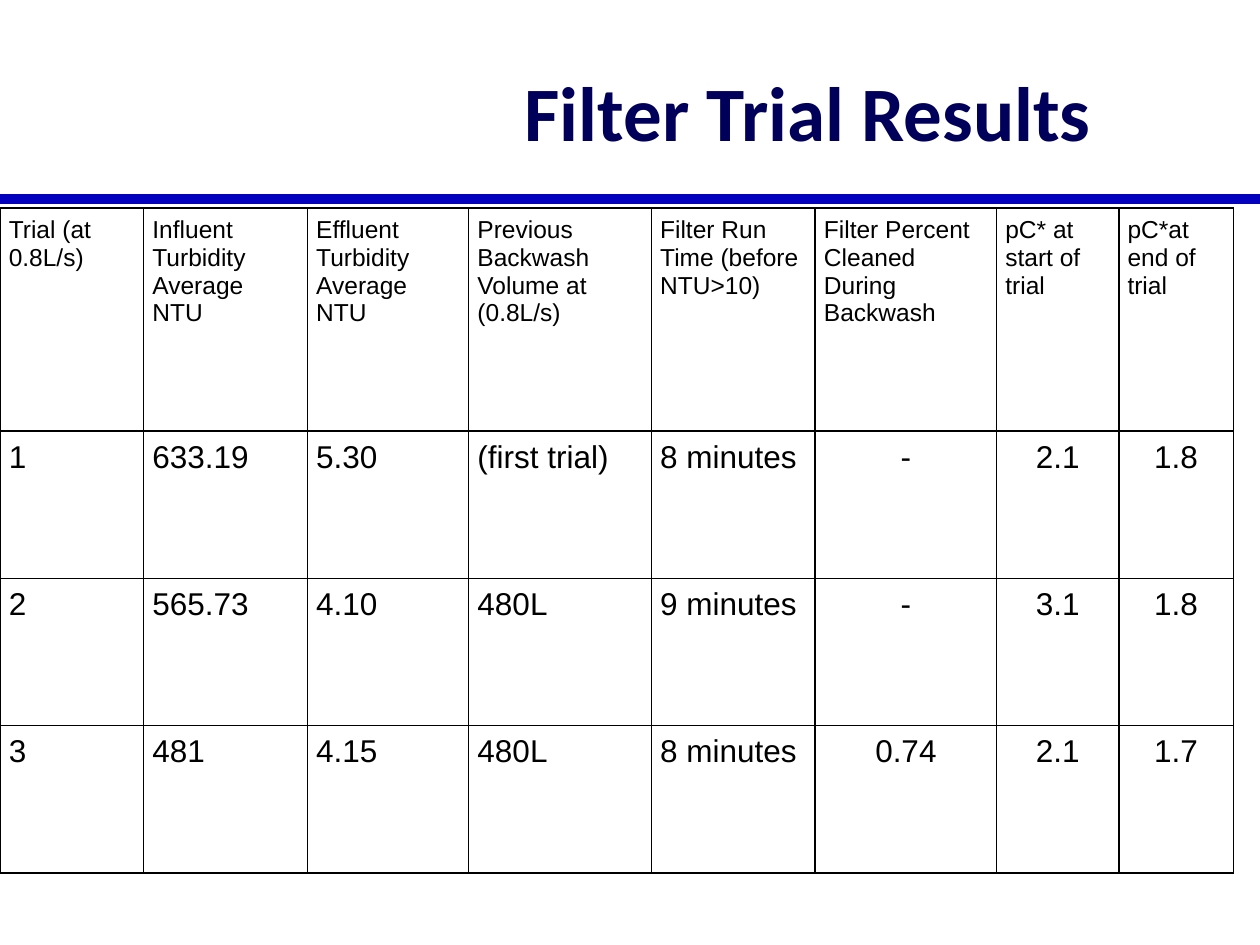
from lxml.etree import SubElement
from pptx import Presentation
from pptx.dml.color import RGBColor
from pptx.enum.shapes import MSO_CONNECTOR as Connector
from pptx.enum.text import MSO_ANCHOR as Anchor, PP_ALIGN as Align
from pptx.oxml import parse_xml
from pptx.oxml.ns import nsdecls, qn
from pptx.util import Inches, Pt

HEADERS = [
    "Trial (at 0.8L/s)",
    "Influent Turbidity Average NTU",
    "Effluent Turbidity Average NTU",
    "Previous Backwash Volume at (0.8L/s)",
    "Filter Run Time (before NTU>10)",
    "Filter Percent Cleaned During Backwash",
    "pC* at start of trial",
    "pC*at end of trial",
]
TRIALS = [
    ["1", "633.19", "5.30", "(first trial)", "8 minutes", "-", "2.1", "1.8"],
    ["2", "565.73", "4.10", "480L", "9 minutes", "-", "3.1", "1.8"],
    ["3", "481", "4.15", "480L", "8 minutes", "0.74", "2.1", "1.7"],
]
COLUMN_WIDTHS = [1.14, 1.3, 1.28, 1.45, 1.3, 1.44, 0.97, 0.91]
ROW_HEIGHTS = [1.77, 1.17, 1.17, 1.17]
FIRST_CENTERED_COLUMN = 5


def color(hex_string):
    return RGBColor.from_string(hex_string)


def write_text(frame, text, font="Arial", size=18, fill="000000", bold=False,
               align=Align.LEFT):
    paragraph = frame.paragraphs[0]
    paragraph.alignment = align
    run = paragraph.add_run()
    run.text = text
    run.font.name = font
    run.font.size = Pt(size)
    run.font.bold = bold
    run.font.color.rgb = color(fill)


def set_margins(target, margin):
    target.margin_left = target.margin_right = Inches(margin)
    target.margin_top = target.margin_bottom = Inches(margin)


def add_borders(cell, hex_string, points):
    """Draw all four cell borders; they must come before the fill."""
    properties = cell._tc.get_or_add_tcPr()
    for position, side in enumerate(("lnL", "lnR", "lnT", "lnB")):
        border = parse_xml(
            f'<a:{side} {nsdecls("a")} w="{Pt(points)}"><a:solidFill>'
            f'<a:srgbClr val="{hex_string}"/></a:solidFill></a:{side}>')
        properties.insert(position, border)


class SlideBuilder:
    """Holds the slide and its style."""

    title_font = "Calibri"
    title_color = "00005A"
    rule_color = "0300BE"
    border_color = "000000"

    def __init__(self, slide):
        self.slide = slide

    def rule(self, left, right, top, points):
        line = self.slide.shapes.add_connector(
            Connector.STRAIGHT, Inches(left), Inches(top), Inches(right), Inches(top))
        line.line.color.rgb = color(self.rule_color)
        line.line.width = Pt(points)
        SubElement(line._element.spPr, qn("a:effectLst"))

    def title(self, text, left, top, width, height):
        box = self.slide.shapes.add_textbox(
            Inches(left), Inches(top), Inches(width), Inches(height))
        frame = box.text_frame
        frame.word_wrap = True
        frame.vertical_anchor = Anchor.MIDDLE
        set_margins(frame, 0.1)
        write_text(frame, text, font=self.title_font, size=44,
                   fill=self.title_color, bold=True, align=Align.CENTER)

    def table(self, rows, left, top, widths, heights):
        table = self.slide.shapes.add_table(
            len(heights), len(widths), Inches(left), Inches(top),
            Inches(sum(widths)), Inches(sum(heights))).table
        table.first_row = table.horz_banding = False
        for column, width in zip(table.columns, widths):
            column.width = Inches(width)
        for row, height in zip(table.rows, heights):
            row.height = Inches(height)
        for row_index, row in enumerate(rows):
            for column_index, text in enumerate(row):
                is_header = row_index == 0
                centered = not is_header and column_index >= FIRST_CENTERED_COLUMN
                cell = table.cell(row_index, column_index)
                cell.fill.background()
                set_margins(cell, 0.07)
                add_borders(cell, self.border_color, 1)
                write_text(cell.text_frame, text, size=14 if is_header else 18,
                           align=Align.CENTER if centered else Align.LEFT)


def main():
    presentation = Presentation()
    presentation.slide_width = Inches(10)
    presentation.slide_height = Inches(7.5)
    builder = SlideBuilder(presentation.slides.add_slide(presentation.slide_layouts[6]))
    builder.rule(0, 10, 1.58, 6)
    builder.title("Filter Trial Results", 3.08, 0.25, 6.67, 1.25)
    builder.table([HEADERS] + TRIALS, 0, 1.65, COLUMN_WIDTHS, ROW_HEIGHTS)
    presentation.save("out.pptx")


if __name__ == "__main__":
    main()
